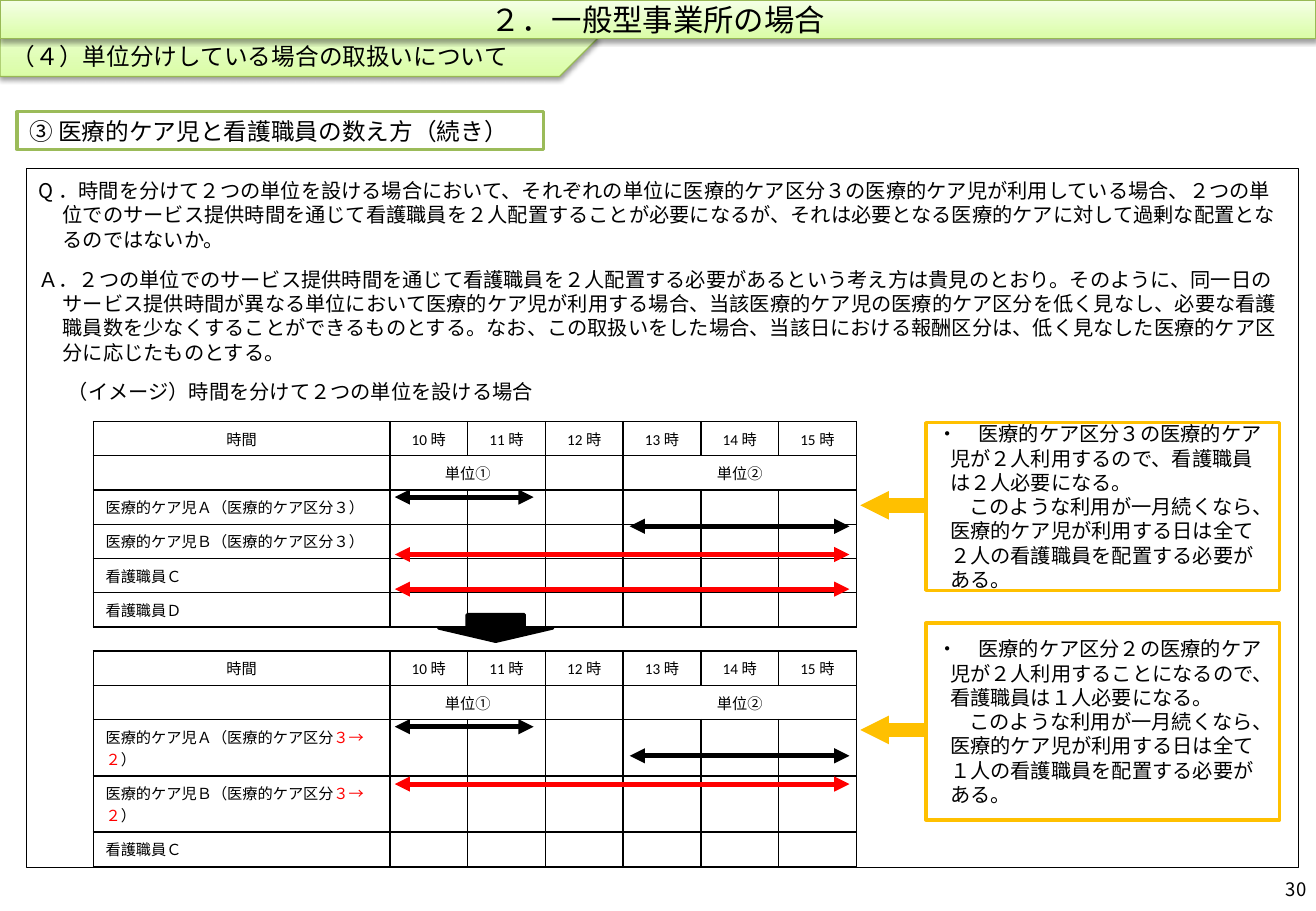
from lxml.etree import SubElement
from pptx import Presentation
from pptx.dml.color import RGBColor
from pptx.enum.dml import MSO_FILL
from pptx.enum.shapes import MSO_CONNECTOR, MSO_SHAPE
from pptx.enum.text import MSO_ANCHOR, MSO_AUTO_SIZE, PP_ALIGN
from pptx.oxml.ns import qn
from pptx.util import Inches, Pt

W, H = Inches(10.83), Inches(7.5)
COL, ROW = W / 100, H / 100
CJK, LATIN = "Noto Sans CJK JP", "Calibri"
COLORS = {
    "black": "000000", "white": "FFFFFF", "red": "FF0000", "amber": "FFC000",
    "green": "9BBB59", "edge": "98B955", "deep": "DAFDA7", "pale": "F5FFE7",
}
TABLE_LEFT, LABEL_COLS, HOUR_COLS, LINE_ROWS = 7.1, 22.53, 5.91, 3.76
CALLOUT_LEFT, CALLOUT_COLS = 70.36, 26.87
HOURS = ["時間"] + [f"{h}時" for h in range(10, 16)]
SPANS = {"morning": (30, 40.55), "afternoon": (47.85, 64.55), "day": (30, 64.55)}
BARS = [("morning", 8.3, "black"), ("afternoon", 11.5, "black"),
        ("day", 14.6, "red"), ("day", 18.4, "red")]


def rgb(name):
    return RGBColor.from_string(COLORS[name])


def grid(c, r, w, h):
    return [int(v) for v in (c * COL, r * ROW, w * COL, h * ROW)]


def add_run(p, text, size, font=CJK, color="black"):
    r = p.add_run()
    r.text = text
    r.font.size, r.font.name = Pt(size), font
    r.font.color.rgb = rgb(color)
    SubElement(r._r.get_or_add_rPr(), qn("a:ea")).set("typeface", CJK)


def indent(p, left, first):
    pPr = p._p.get_or_add_pPr()
    pPr.set("marL", str(Inches(left)))
    pPr.set("indent", str(Inches(first)))


def write(sp, lines, size, font=CJK, align=PP_ALIGN.LEFT, anchor=MSO_ANCHOR.MIDDLE,
          indents=None, gap=0):
    tf = sp.text_frame
    tf.word_wrap, tf.auto_size = True, MSO_AUTO_SIZE.NONE
    tf.vertical_anchor = anchor
    for i, line in enumerate(lines):
        p = tf.paragraphs[0] if i == 0 else tf.add_paragraph()
        p.alignment, p.line_spacing = align, Pt(size * 1.2)
        p.space_before, p.space_after = Pt(0), Pt(gap)
        if indents:
            indent(p, *indents[i])
        add_run(p, line, size, font)


def outline(sp, color, width):
    sp.line.color.rgb = rgb(color)
    sp.line.width = Pt(width)


def add_box(s, kind, place, fill, line, width):
    sp = s.shapes.add_shape(kind, *grid(*place))
    sp.shadow.inherit = False
    sp.fill.solid()
    sp.fill.fore_color.rgb = rgb(fill)
    outline(sp, line, width)
    return sp


def make_banner(sp):
    sp.fill.gradient()
    sp.fill.gradient_angle = 90
    for stop, name, at in zip(sp.fill.gradient_stops, ("deep", "pale"), (0, 1)):
        stop.color.rgb, stop.position = rgb(name), at
    outline(sp, "edge", 0.75)
    sp.shadow.inherit = False
    effects = sp._element.spPr.find(qn("a:effectLst"))
    shadow = SubElement(effects, qn("a:outerShdw"), blurRad=str(Pt(3.1)),
                        dist=str(Pt(1.6)), dir="5400000", rotWithShape="0")
    black = SubElement(shadow, qn("a:srgbClr"), val=COLORS["black"])
    SubElement(black, qn("a:alpha"), val="38000")


def add_arrow(s, c1, c2, r, color, width, ends, size):
    cn = s.shapes.add_connector(MSO_CONNECTOR.STRAIGHT, int(c1 * COL), int(r * ROW),
                                int(c2 * COL), int(r * ROW))
    outline(cn, color, width)
    ln = cn.line._get_or_add_ln()
    for end in ends:
        SubElement(ln, qn(f"a:{end}"), type="triangle", w=size, len=size)
    SubElement(cn._element.spPr, qn("a:effectLst"))


def fill_cell(cell, parts, align):
    tcPr = cell._tc.get_or_add_tcPr()
    for side in ("lnL", "lnR", "lnT", "lnB"):
        ln = SubElement(tcPr, qn(f"a:{side}"), w=str(Pt(1)))
        SubElement(SubElement(ln, qn("a:solidFill")), qn("a:srgbClr"), val=COLORS["black"])
    cell.fill.solid()
    cell.fill.fore_color.rgb = rgb("white")
    cell.vertical_anchor = MSO_ANCHOR.MIDDLE
    p = cell.text_frame.paragraphs[0]
    p.alignment = align
    for text, color in parts:
        add_run(p, text, 9, LATIN, color)
    if not parts:
        SubElement(p._p, qn("a:endParaRPr"), sz="900")


def add_schedule(s, top, labels, heights, bars):
    rows = [[[(h, "black")] for h in HOURS],
            [[], [("単位①", "black")], [], [], [("単位②", "black")], [], []]]
    rows += [[label] + [[]] * 6 for label in labels]
    place = grid(TABLE_LEFT, top, LABEL_COLS + 6 * HOUR_COLS, sum(heights))
    tb = s.shapes.add_table(len(rows), 7, *place).table
    tb.first_row = tb.horz_banding = False
    for i, col in enumerate(tb.columns):
        col.width = int((HOUR_COLS if i else LABEL_COLS) * COL)
    for i, row in enumerate(rows):
        tb.rows[i].height = int(heights[i] * ROW)
        for j, parts in enumerate(row):
            align = PP_ALIGN.CENTER if i < 2 else PP_ALIGN.LEFT
            fill_cell(tb.cell(i, j), parts, align)
    tb.cell(1, 1).merge(tb.cell(1, 2))
    tb.cell(1, 4).merge(tb.cell(1, 6))
    for span, offset, color in bars:
        add_arrow(s, *SPANS[span], top + offset, color, 3, ("headEnd", "tailEnd"), "med")


def add_callout(s, top, height, arrow_row, lines):
    sp = add_box(s, MSO_SHAPE.RECTANGLE, (CALLOUT_LEFT, top, CALLOUT_COLS, height),
                 "white", "amber", 2)
    write(sp, lines, 12, LATIN, indents=[(0.1, -0.1), (0.1, 0.16)])
    add_arrow(s, CALLOUT_LEFT, 65.37, arrow_row, "amber", 8.5, ("tailEnd",), "sm")


def add_label(s, place, text, size, align=PP_ALIGN.LEFT):
    write(s.shapes.add_textbox(*grid(*place)), [text], size, align=align)


def add_question(s):
    sp = s.placeholders[1]
    sp.left, sp.top, sp.width, sp.height = grid(2, 18.5, 96.7, 76.7)
    outline(sp, "black", 0.75)
    sp.text_frame.margin_top = sp.text_frame.margin_bottom = Inches(0.08)
    write(sp, [
        "Q．時間を分けて２つの単位を設ける場合において、それぞれの単位に医療的ケア区分３の医療的ケア児が利用している場合、２つの単位でのサービス提供時間を通じて看護職員を２人配置することが必要になるが、それは必要となる医療的ケアに対して過剰な配置となるのではないか。",
        "Ａ．２つの単位でのサービス提供時間を通じて看護職員を２人配置する必要があるという考え方は貴見のとおり。そのように、同一日のサービス提供時間が異なる単位において医療的ケア児が利用する場合、当該医療的ケア児の医療的ケア区分を低く見なし、必要な看護職員数を少なくすることができるものとする。なお、この取扱いをした場合、当該日における報酬区分は、低く見なした医療的ケア区分に応じたものとする。",
    ], 12, anchor=MSO_ANCHOR.TOP, indents=[(0.2, -0.2)] * 2, gap=9.5)
    for p in sp.text_frame.paragraphs:
        SubElement(p._p.get_or_add_pPr(), qn("a:buNone"))


def add_headings(s):
    section = s.shapes.add_shape(MSO_SHAPE.PENTAGON, *grid(0, 0, 45.43, 8.4))
    make_banner(section)
    write(section, ["（４）単位分けしている場合の取扱いについて"], 14, anchor=MSO_ANCHOR.BOTTOM)
    title = s.shapes.title
    title.left, title.top, title.width, title.height = grid(0, 0, 100, 4.2)
    make_banner(title)
    write(title, ["２．一般型事業所の場合"], 18, align=PP_ALIGN.CENTER)
    section._element.addnext(title._element)
    topic = add_box(s, MSO_SHAPE.PENTAGON, (1.3, 12.27, 40, 4.13), "white", "green", 2)
    topic.adjustments[0] = 0
    write(topic, ["③ 医療的ケア児と看護職員の数え方（続き）"], 14)


def main():
    prs = Presentation()
    prs.slide_width, prs.slide_height = W, H
    s = prs.slides.add_slide(prs.slide_layouts[1])
    add_question(s)
    add_headings(s)
    add_label(s, (4.25, 40.5, 39.15, 4.93), "（イメージ）時間を分けて２つの単位を設ける場合", 12)
    add_label(s, (76.82, 95.2, 23.36, 5.33 - 0.6), "30", 11, PP_ALIGN.RIGHT)

    child = "医療的ケア児{}（医療的ケア区分"
    nurses = [[(f"看護職員{n}", "black")] for n in "ＣＤ"]
    before = [[(child.format(n) + "３）", "black")] for n in "ＡＢ"]
    after = [[(child.format(n), "black"), ("３→２", "red"), ("）", "black")] for n in "ＡＢ"]
    add_schedule(s, 46.27, before + nurses, [LINE_ROWS] * 6, BARS)
    add_box(s, MSO_SHAPE.DOWN_ARROW, (33.33, 67.47, 8.68, 2.93), "black", "black", 2)
    add_schedule(s, 71.47, after + nurses[:1],
                 [LINE_ROWS] * 2 + [6.16] * 2 + [LINE_ROWS], BARS[:3])

    monthly = "このような利用が一月続くなら、医療的ケア児が利用する日は全て{}人の看護職員を配置する必要がある。"
    add_callout(s, 46.4, 18.4, 55.47, [
        "・　医療的ケア区分３の医療的ケア児が２人利用するので、看護職員は２人必要になる。",
        monthly.format("２")])
    add_callout(s, 68.4, 21.6, 80.13, [
        "・　医療的ケア区分２の医療的ケア児が２人利用することになるので、看護職員は１人必要になる。",
        monthly.format("１")])
    prs.save("out.pptx")


if __name__ == "__main__":
    main()
